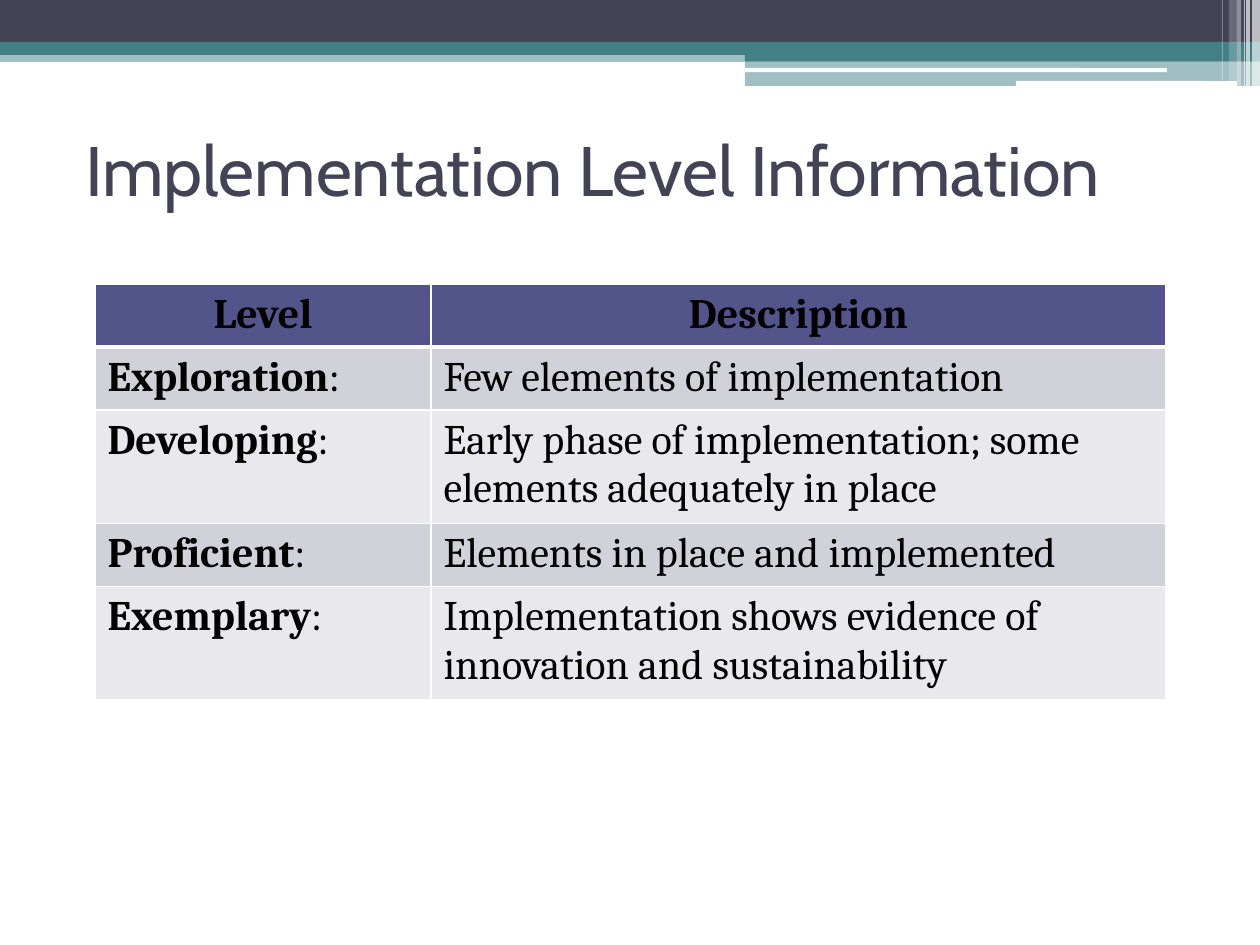
"""Build the Implementation Level Information slide."""
from lxml.etree import SubElement
from pptx import Presentation
from pptx.dml.color import RGBColor
from pptx.enum.shapes import MSO_SHAPE
from pptx.enum.text import MSO_ANCHOR, PP_ALIGN
from pptx.oxml.ns import qn
from pptx.util import Pt

PX = 914400 / 126
COLORS = {
    "navy": "424456",
    "teal": "438086",
    "white": "FFFFFF",
    "black": "000000",
    "header": "53548A",
    "band_dark": "D1D1DA",
    "band_light": "E9E9ED",
}


def px(*lengths):
    return [round(length * PX) for length in lengths]


def add_run(paragraph, text, font, size, color, bold=False):
    run = paragraph.add_run()
    run.text = text
    run.font.name = font
    run.font.size = Pt(size)
    run.font.bold = bold
    run.font.color.rgb = RGBColor.from_string(COLORS[color])


presentation = Presentation()
presentation.slide_width, presentation.slide_height = px(1260, 945)
slide = presentation.slides.add_slide(presentation.slide_layouts[6])

RECTANGLE, ROUNDED = MSO_SHAPE.RECTANGLE, MSO_SHAPE.ROUNDED_RECTANGLE
banner = [
    (RECTANGLE, 0, 50, 1260, 12, "teal", 50),
    (RECTANGLE, 0, 0, 1260, 43, "navy", 100),
    (RECTANGLE, 0, 42, 1260, 13, "teal", 100),
    (RECTANGLE, 745, 49, 515, 12, "teal", 100),
    (RECTANGLE, 745, 61, 515, 25, "teal", 50),
    (ROUNDED, 745, 68, 422, 4, "white", 100),
    (ROUNDED, 1016, 81, 221, 5, "white", 100),
]
stripes = [
    (1252, 8, 86, 65),
    (1246, 4, 86, 65),
    (1244, 1, 86, 60),
    (1237, 4, 86, 40),
    (1229, 8, 81, 20),
    (1222, 1, 81, 30),
]
banner += [(RECTANGLE, left, 0, width, height, "white", opacity)
           for left, width, height, opacity in stripes]
for kind, left, top, width, height, color, opacity in banner:
    shape = slide.shapes.add_shape(kind, *px(left, top, width, height))
    shape.shadow.inherit = False
    shape.line.fill.background()
    shape.fill.solid()
    shape.fill.fore_color.rgb = RGBColor.from_string(COLORS[color])
    if opacity < 100:
        color_element = shape.fill._xPr.find(qn("a:solidFill"))[0]
        SubElement(color_element, qn("a:alpha"), val=str(opacity * 1000))

title = slide.shapes.add_textbox(*px(73, 95, 1134, 147))
title.text_frame.word_wrap = True
title.text_frame.vertical_anchor = MSO_ANCHOR.MIDDLE
add_run(title.text_frame.paragraphs[0], "Implementation Level Information", "Cabin", 40, "navy")

levels = [
    ("Level", "Description"),
    ("Exploration", "Few elements of implementation"),
    ("Developing", "Early phase of implementation; some elements adequately in place"),
    ("Proficient", "Elements in place and implemented"),
    ("Exemplary", "Implementation shows evidence of innovation and sustainability"),
]
frame = slide.shapes.add_table(len(levels), 2, *px(95, 284, 1071, 416))
table = frame.table
for column, width in zip(table.columns, px(336, 735)):
    column.width = width
for row_index, texts in enumerate(levels):
    is_header = row_index == 0
    table.rows[row_index].height = px(52)[0]
    fill = "header" if is_header else ("band_light", "band_dark")[row_index % 2]
    for column_index, text in enumerate(texts):
        cell = table.cell(row_index, column_index)
        properties = cell._tc.get_or_add_tcPr()
        for side in "LRTB":
            thick = (side == "B" and row_index == 0) or (side == "T" and row_index == 1)
            border = SubElement(properties, qn(f"a:ln{side}"), w=str(Pt(3 if thick else 1)))
            border_fill = SubElement(border, qn("a:solidFill"))
            SubElement(border_fill, qn("a:srgbClr"), val=COLORS["white"])
        cell.fill.solid()
        cell.fill.fore_color.rgb = RGBColor.from_string(COLORS[fill])
        paragraph = cell.text_frame.paragraphs[0]
        paragraph.alignment = PP_ALIGN.CENTER if is_header else PP_ALIGN.LEFT
        add_run(paragraph, text, "Cambria", 24, "black", is_header or column_index == 0)
        if column_index == 0 and not is_header:
            add_run(paragraph, ":", "Cambria", 24, "black")
frame.height = px(416)[0]

presentation.save("out.pptx")
